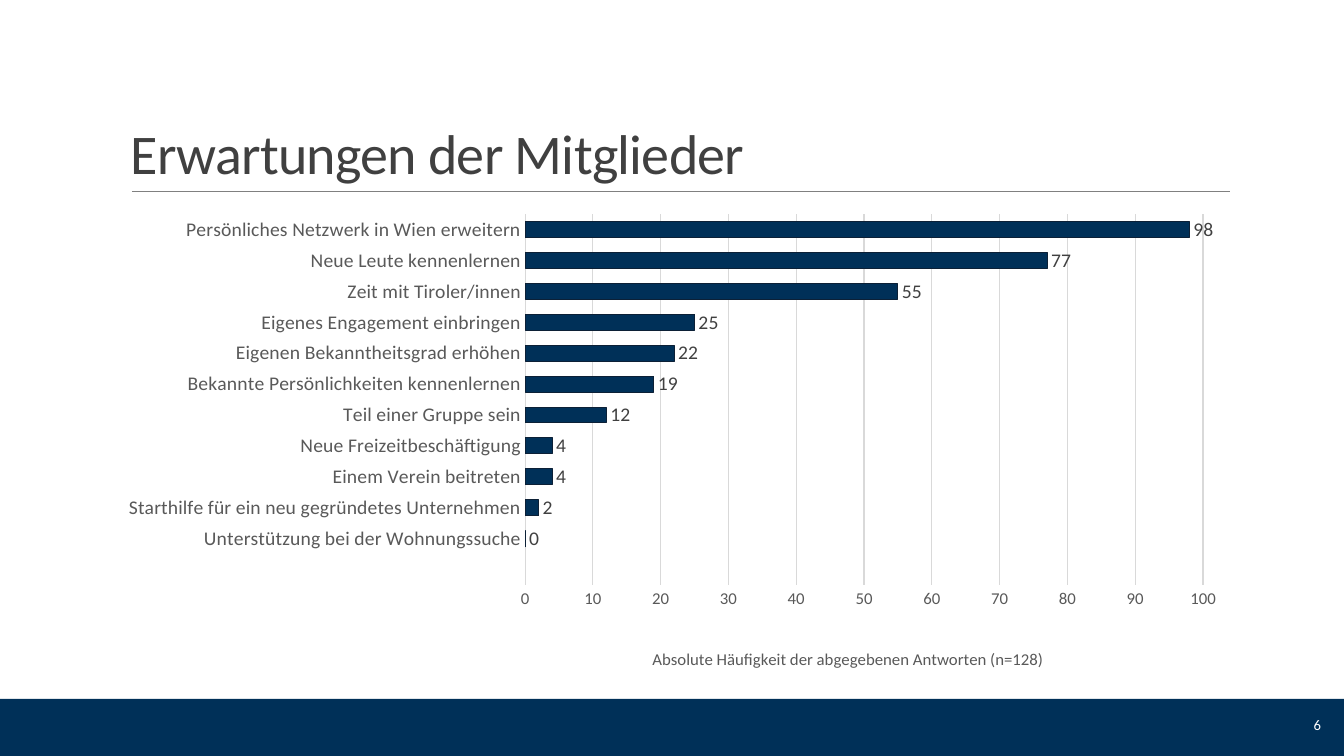
from lxml.etree import SubElement
from pptx import Presentation
from pptx.chart.data import CategoryChartData
from pptx.dml.color import RGBColor
from pptx.enum.chart import XL_CHART_TYPE, XL_LABEL_POSITION, XL_TICK_MARK
from pptx.enum.shapes import MSO_CONNECTOR, MSO_SHAPE
from pptx.enum.text import MSO_ANCHOR, PP_ALIGN
from pptx.oxml import parse_xml
from pptx.oxml.ns import nsdecls, qn
from pptx.util import Emu, Pt

SCALE = 914400 / 100.8
FONT = "Calibri"
NAVY, GREY, DARK, PALE = "003058", "595959", "404040", "D9D9D9"

EXPECTATIONS = {
    "": None,
    "Unterstützung bei der Wohnungssuche": 0,
    "Starthilfe für ein neu gegründetes Unternehmen": 2,
    "Einem Verein beitreten": 4,
    "Neue Freizeitbeschäftigung": 4,
    "Teil einer Gruppe sein": 12,
    "Bekannte Persönlichkeiten kennenlernen": 19,
    "Eigenen Bekanntheitsgrad erhöhen": 22,
    "Eigenes Engagement einbringen": 25,
    "Zeit mit Tiroler/innen": 55,
    "Neue Leute kennenlernen": 77,
    "Persönliches Netzwerk in Wien erweitern": 98,
}


def px(*lengths):
    return [Emu(round(length * SCALE)) for length in lengths]


def rgb(value):
    return RGBColor.from_string(value)


def apply(target, values):
    for name, value in values.items():
        setattr(target, name, value)


def style_font(font, size, color):
    apply(font, {"name": FONT, "size": Pt(size), "bold": False})
    font.color.rgb = rgb(color)


def style_line(line, color, width):
    line.color.rgb = rgb(color)
    line.width = Pt(width)


def add_band(slide, top, height):
    band = slide.shapes.add_shape(MSO_SHAPE.RECTANGLE, *px(0, top, 1344, height))
    band.shadow.inherit = False
    band.fill.solid()
    band.fill.fore_color.rgb = rgb(NAVY)
    band.line.fill.background()


def add_rule(slide, left, right, top):
    rule = slide.shapes.add_connector(MSO_CONNECTOR.STRAIGHT, *px(left, top, right, top))
    style_line(rule.line, "808080", 0.5)
    SubElement(rule._element.spPr, qn("a:effectLst"))


def add_text(slide, box, wording, size, color, anchor, paragraph_format, spacing=0):
    frame = slide.shapes.add_textbox(*px(*box)).text_frame
    apply(frame, {"word_wrap": True, "vertical_anchor": anchor})
    paragraph = frame.paragraphs[0]
    apply(paragraph, paragraph_format)
    run = paragraph.add_run()
    run.text = wording
    style_font(run.font, size, color)
    if spacing:
        run._r.get_or_add_rPr().set("spc", str(spacing))


def manual_layout(target, **places):
    parts = "".join(f'<c:{name} val="{value}"/>' for name, value in places.items())
    return parse_xml(
        f'<c:layout {nsdecls("c")}><c:manualLayout>{target}'
        f'<c:xMode val="edge"/><c:yMode val="edge"/>{parts}'
        "</c:manualLayout></c:layout>"
    )


def place_plot(chart):
    plot_area = chart._chartSpace.chart.plotArea
    for layout in plot_area.findall(qn("c:layout")):
        plot_area.remove(layout)
    inner = '<c:layoutTarget val="inner"/>'
    plot_area.insert(0, manual_layout(inner, x=0.37, y=0.02, w=0.6, h=0.8))


def style_axes(chart):
    tickless = {
        "major_tick_mark": XL_TICK_MARK.NONE,
        "minor_tick_mark": XL_TICK_MARK.NONE,
    }
    answers, frequency = chart.category_axis, chart.value_axis
    for axis, size in ((answers, 14), (frequency, 12)):
        apply(axis, tickless)
        style_font(axis.tick_labels.font, size, GREY)
    style_line(answers.format.line, PALE, 0.75)
    frequency.format.line.fill.background()
    apply(frequency, {"minimum_scale": 0, "maximum_scale": 100, "major_unit": 10})
    style_line(frequency.major_gridlines.format.line, PALE, 0.75)

    title = frequency.axis_title
    caption = title.text_frame.paragraphs[0].add_run()
    caption.text = "Absolute Häufigkeit der abgegebenen Antworten (n=128)"
    style_font(caption.font, 12, GREY)
    for layout in title._element.findall(qn("c:layout")):
        title._element.remove(layout)
    title._element.find(qn("c:tx")).addnext(manual_layout("", x=0.48, y=0.95))


def add_bar_chart(slide, box):
    data = CategoryChartData()
    data.categories = list(EXPECTATIONS)
    data.add_series("Series 1", list(EXPECTATIONS.values()))
    chart = slide.shapes.add_chart(XL_CHART_TYPE.BAR_CLUSTERED, *px(*box), data).chart
    apply(chart, {"has_legend": False, "has_title": False})
    style_font(chart.font, 10, "000000")
    place_plot(chart)
    style_axes(chart)

    plot = chart.plots[0]
    apply(plot, {"gap_width": 95, "vary_by_categories": False, "has_data_labels": True})
    apply(plot.data_labels, {"show_value": True, "position": XL_LABEL_POSITION.OUTSIDE_END})
    style_font(plot.data_labels.font, 14, DARK)
    bars = plot.series[0]
    bars.invert_if_negative = False
    bars.format.fill.solid()
    bars.format.fill.fore_color.rgb = rgb(NAVY)
    style_line(bars.format.line, "0C2036", 0.75)


def main():
    deck = Presentation()
    deck.slide_width, deck.slide_height = px(1344, 756)
    slide = deck.slides.add_slide(deck.slide_layouts[6])
    add_band(slide, 706, 50)
    add_band(slide, 699, 7)
    add_rule(slide, 132, 1230, 191)
    add_text(slide, (121, 31, 1109, 160), "Erwartungen der Mitglieder", 40, DARK,
             MSO_ANCHOR.BOTTOM, {"line_spacing": 0.85}, -50)
    add_text(slide, (1187, 705, 144, 40), "6", 10.5, "FFFFFF",
             MSO_ANCHOR.MIDDLE, {"alignment": PP_ALIGN.RIGHT})
    add_bar_chart(slide, (107, 205, 1130, 470))
    deck.save("out.pptx")


if __name__ == "__main__":
    main()
